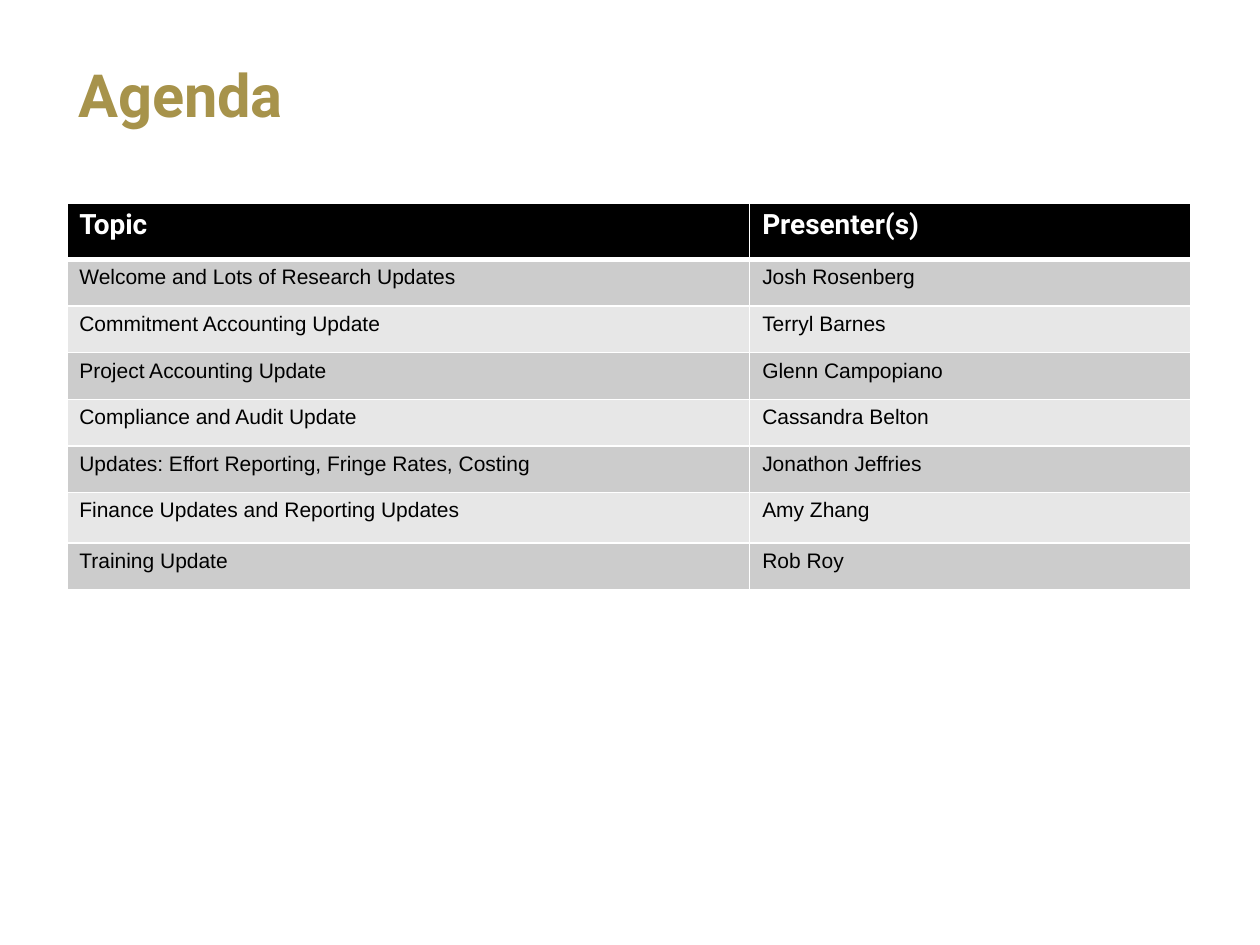
from lxml import etree
from pptx import Presentation
from pptx import util as u
from pptx.dml.color import RGBColor
from pptx.enum import text
from pptx.oxml.ns import qn

# Content
TITLE = "Agenda"
HEADINGS = ("Topic", "Presenter(s)")
SESSIONS = [
    ("Welcome and Lots of Research Updates", "Josh Rosenberg"),
    ("Commitment Accounting Update", "Terryl Barnes"),
    ("Project Accounting Update", "Glenn Campopiano"),
    ("Compliance and Audit Update", "Cassandra Belton"),
    ("Updates: Effort Reporting, Fringe Rates, Costing", "Jonathon Jeffries"),
    ("Finance Updates and Reporting Updates", "Amy Zhang"),
    ("Training Update", "Rob Roy"),
]

# Colours
GOLD = RGBColor(0xA7, 0x93, 0x4B)
BLACK = RGBColor(0, 0, 0)
WHITE = RGBColor(0xFF, 0xFF, 0xFF)
BANDS = (RGBColor(0xCC, 0xCC, 0xCC), RGBColor(0xE7, 0xE7, 0xE7))

# Grid, in inches
LEFT, TABLE_TOP = 0.53, 1.61
COLUMNS = (5.42, 3.5)
ROWS = [0.45] + [0.37] * len(SESSIONS)
ROWS[6] = 0.4


def add_run(paragraph, words, font, size, colour, bold):
    run = paragraph.add_run()
    run.text = words
    run.font.name = font
    run.font.size = u.Pt(size)
    run.font.color.rgb = colour
    run.font.bold = bold


def set_borders(cell, bottom, top):
    widths = {"a:lnL": 1, "a:lnR": 1, "a:lnT": top, "a:lnB": bottom}
    properties = cell._tc.get_or_add_tcPr()
    for side, points in widths.items():
        line = etree.SubElement(properties, qn(side), w=str(u.Pt(points)))
        fill = etree.SubElement(line, qn("a:solidFill"))
        etree.SubElement(fill, qn("a:srgbClr"), val=str(WHITE))


deck = Presentation()
deck.slide_width, deck.slide_height = u.Inches(10), u.Inches(7.5)
slide = deck.slides.add_slide(deck.slide_layouts[5])

# Title
title = slide.shapes.title
title.left, title.top = u.Inches(0.52), u.Inches(0.09)
title.width, title.height = u.Inches(8.06), u.Inches(1.38)
title.text_frame.vertical_anchor = text.MSO_ANCHOR.MIDDLE
heading = title.text_frame.paragraphs[0]
heading.alignment = text.PP_ALIGN.LEFT
heading.line_spacing = 0.9
add_run(heading, TITLE, "Roboto", 34, GOLD, True)

# Agenda table
agenda = slide.shapes.add_table(
    len(ROWS), len(COLUMNS), u.Inches(LEFT), u.Inches(TABLE_TOP),
    u.Inches(sum(COLUMNS)), u.Inches(sum(ROWS))).table
for column, width in zip(agenda.columns, COLUMNS):
    column.width = u.Inches(width)

for r, (height, entries) in enumerate(zip(ROWS, [HEADINGS] + SESSIONS)):
    agenda.rows[r].height = u.Inches(height)
    is_header = r == 0
    for c, words in enumerate(entries):
        cell = agenda.cell(r, c)
        set_borders(cell, bottom=3 if is_header else 1, top=3 if r == 1 else 1)
        cell.fill.solid()
        cell.fill.fore_color.rgb = BLACK if is_header else BANDS[(r - 1) % 2]
        style = ("Roboto", 16, WHITE, True) if is_header else ("Arial", 12, BLACK, False)
        add_run(cell.text_frame.paragraphs[0], words, *style)

deck.save("out.pptx")
